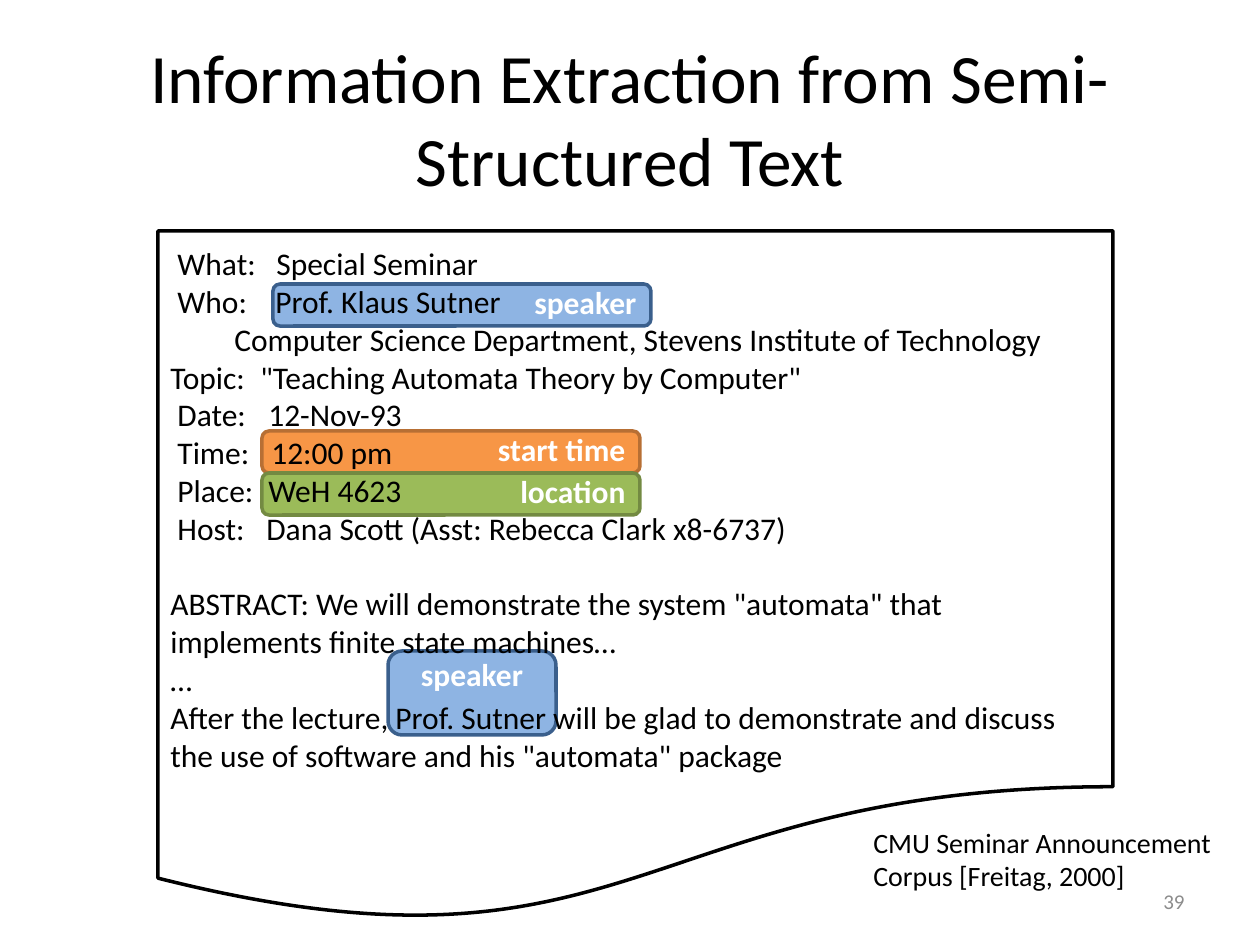
from dataclasses import dataclass
from typing import Optional

import pptx
import pptx.dml.color
import pptx.enum.shapes
import pptx.enum.text
import pptx.oxml.ns
import pptx.util
from lxml import etree

ALIGN = pptx.enum.text.PP_ALIGN
ANCHOR = pptx.enum.text.MSO_ANCHOR
SHAPE = pptx.enum.shapes.MSO_SHAPE
EMU_PER_PX = 914400 / 126


@dataclass(frozen=True)
class Theme:
    font: str = "Calibri"
    black: str = "000000"
    white: str = "FFFFFF"
    grey: str = "8C8C8C"
    blue: str = "8EB4E3"
    blue_line: str = "3A5F8C"
    orange: str = "F79646"
    orange_line: str = "B76F34"
    green: str = "9BBB59"
    green_line: str = "738A42"
    title_size: float = 39.6
    body_size: float = 18
    caption_size: float = 16
    number_size: float = 12
    line_width: float = 2


THEME = Theme()


@dataclass(frozen=True)
class Box:
    left: int
    top: int
    width: int
    height: int


@dataclass(frozen=True)
class Line:
    text: str
    tab: Optional[int] = None  # px from the text edge
    indent: int = 0  # px
    space_before: float = 0  # points


@dataclass(frozen=True)
class Style:
    size: float
    color: str = THEME.black
    bold: bool = False
    align: ALIGN = ALIGN.LEFT
    anchor: ANCHOR = ANCHOR.MIDDLE


@dataclass(frozen=True)
class Tag:
    text: str
    box: Box
    fill: str
    line: str
    align: ALIGN = ALIGN.RIGHT
    anchor: ANCHOR = ANCHOR.MIDDLE


def px(value: int) -> pptx.util.Emu:
    return pptx.util.Emu(round(value * EMU_PER_PX))


def rgb(color: str) -> pptx.dml.color.RGBColor:
    return pptx.dml.color.RGBColor.from_string(color)


def place(box: Box) -> tuple:
    return px(box.left), px(box.top), px(box.width), px(box.height)


def write(frame, lines: list[Line], style: Style, wrap: bool = True) -> None:
    frame.word_wrap = wrap
    frame.vertical_anchor = style.anchor
    for index, line in enumerate(lines):
        paragraph = frame.add_paragraph() if index else frame.paragraphs[0]
        paragraph.alignment = style.align
        if line.space_before:
            paragraph.space_before = pptx.util.Pt(line.space_before)
        properties = paragraph._p.get_or_add_pPr()
        if line.indent:
            properties.set("marL", str(px(line.indent)))
        if line.tab:
            tabs = etree.SubElement(properties, pptx.oxml.ns.qn("a:tabLst"))
            etree.SubElement(tabs, pptx.oxml.ns.qn("a:tab"),
                             pos=str(px(line.tab)), algn="l")
        run = paragraph.add_run()
        run.text = line.text
        run.font.name = THEME.font
        run.font.size = pptx.util.Pt(style.size)
        run.font.bold = style.bold
        run.font.color.rgb = rgb(style.color)


def draw_text(slide, box: Box, lines: list[Line], style: Style, wrap: bool = True):
    shape = slide.shapes.add_textbox(*place(box))
    write(shape.text_frame, lines, style, wrap)
    return shape


def draw_outline(slide, kind: SHAPE, box: Box, line: str, fill: Optional[str] = None):
    shape = slide.shapes.add_shape(kind, *place(box))
    shape.shadow.inherit = False
    if fill:
        shape.fill.solid()
        shape.fill.fore_color.rgb = rgb(fill)
    else:
        shape.fill.background()
    shape.line.color.rgb = rgb(line)
    shape.line.width = pptx.util.Pt(THEME.line_width)
    return shape


def draw_tag(slide, tag: Tag) -> None:
    shape = draw_outline(slide, SHAPE.ROUNDED_RECTANGLE, tag.box, tag.line, tag.fill)
    shape.text_frame.margin_top = 0
    write(shape.text_frame, [Line(tag.text)],
          Style(THEME.body_size, THEME.white, True, tag.align, tag.anchor))


TAGS = [
    Tag("start time", Box(262, 431, 378, 42), THEME.orange, THEME.orange_line),
    Tag("location", Box(262, 473, 378, 42), THEME.green, THEME.green_line),
    Tag("speaker", Box(388, 651, 168, 84), THEME.blue, THEME.blue_line,
        ALIGN.CENTER, ANCHOR.TOP),
    Tag("speaker", Box(273, 284, 378, 42), THEME.blue, THEME.blue_line),
]

ANNOUNCEMENT = [
    Line(" What:\tSpecial Seminar", tab=106),
    Line(" Who:\tProf. Klaus Sutner", tab=105),
    Line("Computer Science Department, Stevens Institute of Technology", indent=64),
    Line('Topic:\t"Teaching Automata Theory by Computer"', tab=90),
    Line(" Date:\t12-Nov-93", tab=98),
    Line(" Time:\t12:00 pm", tab=101),
    Line(" Place:\tWeH 4623", tab=98),
    Line(" Host:\tDana Scott (Asst: Rebecca Clark x8-6737)", tab=96),
    Line('ABSTRACT: We will demonstrate the system "automata" that '
         "implements finite state machines…", space_before=21.6),
    Line("…"),
    Line("After the lecture, Prof. Sutner will be glad to demonstrate and discuss "
         'the use of software and his "automata" package'),
]


def main() -> None:
    presentation = pptx.Presentation()
    presentation.slide_width, presentation.slide_height = px(1260), px(945)
    slide = presentation.slides.add_slide(presentation.slide_layouts[6])

    # Highlights behind the extracted fields
    for tag in TAGS:
        draw_tag(slide, tag)

    # Title
    draw_text(slide, Box(63, 38, 1134, 158),
              [Line("Information Extraction from Semi-Structured Text")],
              Style(THEME.title_size, align=ALIGN.CENTER))

    # Seminar announcement
    document = draw_outline(slide, SHAPE.FLOWCHART_DOCUMENT,
                            Box(158, 231, 955, 693), THEME.black)
    write(document.text_frame, ANNOUNCEMENT, Style(THEME.body_size))

    # Source and slide number
    caption = draw_text(slide, Box(861, 819, 377, 81),
                        [Line("CMU Seminar Announcement"), Line("Corpus [Freitag, 2000]")],
                        Style(THEME.caption_size, anchor=ANCHOR.TOP), wrap=False)
    caption.text_frame.auto_size = pptx.enum.text.MSO_AUTO_SIZE.SHAPE_TO_FIT_TEXT
    draw_text(slide, Box(903, 876, 294, 50), [Line("39")],
              Style(THEME.number_size, THEME.grey, align=ALIGN.RIGHT))

    presentation.save("out.pptx")


if __name__ == "__main__":
    main()
